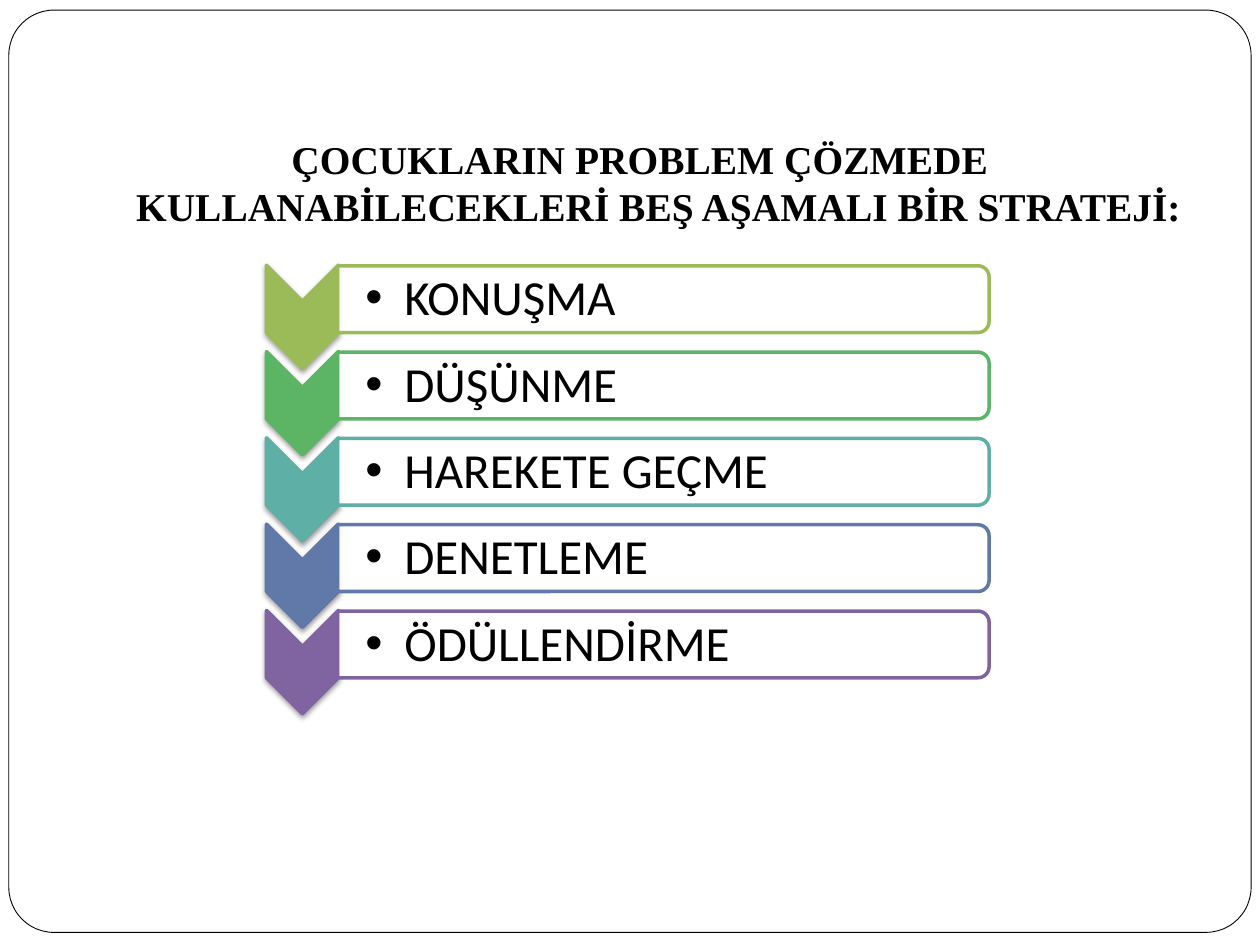
from lxml import etree
from pptx import Presentation
from pptx.dml.color import RGBColor
from pptx.enum.shapes import MSO_SHAPE
from pptx.enum.text import MSO_ANCHOR, PP_ALIGN
from pptx.oxml import parse_xml
from pptx.oxml.ns import nsdecls, qn
from pptx.util import Inches, Pt

FRAME, CHEVRON, BAR = (MSO_SHAPE.ROUNDED_RECTANGLE, MSO_SHAPE.CHEVRON,
                       MSO_SHAPE.ROUND_2_SAME_RECTANGLE)
TOP, MIDDLE = MSO_ANCHOR.TOP, MSO_ANCHOR.MIDDLE
CENTER, LEFT = PP_ALIGN.CENTER, PP_ALIGN.LEFT
TITLE = "ÇOCUKLARIN PROBLEM ÇÖZMEDE KULLANABİLECEKLERİ BEŞ AŞAMALI BİR STRATEJİ:"
STEPS = [("KONUŞMA", "9BBB59"), ("DÜŞÜNME", "5CB565"), ("HAREKETE GEÇME", "5EAFA6"),
         ("DENETLEME", "6179A8"), ("ÖDÜLLENDİRME", "8064A2")]
PITCH = 0.685
SHADOW = (f'<a:effectLst {nsdecls("a")}><a:outerShdw blurRad="40000" dist="20000" '
          'dir="5400000" rotWithShape="0"><a:srgbClr val="000000">'
          '<a:alpha val="38000"/></a:srgbClr></a:outerShdw></a:effectLst>')


def rgb(value):
    """Return the colour for a hex string."""
    return RGBColor.from_string(value)


def assign(obj, values):
    """Set each attribute named in a dict."""
    for name, value in values.items():
        setattr(obj, name, value)


class Deck:
    """Holds the text styles and the current slide."""

    title = {"name": "Times New Roman", "size": Pt(22.5), "bold": True}
    step = {"name": "Calibri", "size": Pt(28)}

    def __init__(self, prs):
        """Add a blank slide."""
        self.s = prs.slides.add_slide(prs.slide_layouts[6])

    def shape(self, kind, box, fill, line, width=2, rotation=0):
        """Add a filled and outlined shape without a shadow."""
        sp = self.s.shapes.add_shape(kind, *map(Inches, box))
        sp.rotation = rotation
        sp.shadow.inherit = False
        sp.fill.solid()
        sp.fill.fore_color.rgb = rgb(fill)
        sp.line.color.rgb = rgb(line)
        sp.line.width = Pt(width)
        return sp

    def frame(self, box):
        """Add the rounded slide border."""
        sp = self.shape(FRAME, box, "FFFFFF", "000000", 0.5)
        sp.adjustments[0] = 0.049

    def chevron(self, box, color):
        """Add a downward chevron with a soft shadow."""
        sp = self.shape(CHEVRON, box, color, color, rotation=90)
        effects = sp._element.spPr.find(qn("a:effectLst"))
        effects.getparent().replace(effects, parse_xml(SHADOW))

    def bar(self, box, color):
        """Add a nearly opaque white bar rounded on its right side."""
        sp = self.shape(BAR, box, "FFFFFF", color, rotation=90)
        fill = sp._element.spPr.find(qn("a:solidFill"))
        etree.SubElement(fill[0], qn("a:alpha"), val="90000")

    def text(self, text, box, font, insets, anchor, align, indent, spacing, bullet=None):
        """Add a wrapped text box with a hanging indent."""
        tf = self.s.shapes.add_textbox(*map(Inches, box)).text_frame
        sides = ("margin_left", "margin_top", "margin_right", "margin_bottom")
        assign(tf, dict(zip(sides, map(Inches, insets))))
        assign(tf, {"word_wrap": True, "vertical_anchor": anchor})
        p = tf.paragraphs[0]
        assign(p, {"alignment": align, **spacing})
        pPr = p._p.get_or_add_pPr()
        pPr.set("marL", str(Inches(indent)))
        pPr.set("indent", str(-Inches(indent)))
        if bullet:
            etree.SubElement(pPr, qn("a:buFont"), typeface="Arial")
            etree.SubElement(pPr, qn("a:buChar"), char=bullet)
        r = p.add_run()
        r.text = text
        assign(r.font, font)
        r.font.color.rgb = rgb("000000")


def main():
    """Build and save the slide."""
    prs = Presentation()
    prs.slide_width, prs.slide_height = Inches(10), Inches(7.5)
    deck = Deck(prs)
    deck.frame((0.07, 0.08, 9.86, 7.32))
    deck.text(TITLE, (0.39, 1.02, 9.38, 1.17), deck.title, (0.1, 0.05, 0.1, 0.05),
              TOP, CENTER, 0.3, {"space_before": Pt(5.8)})
    for i, (label, color) in enumerate(STEPS):
        y = i * PITCH
        deck.chevron((1.99, 2.23 + y, 0.82, 0.57), color)
        deck.bar((5, y - 0.21, 0.53, 5.17), color)
        deck.text(label, (2.68, 2.14 + y, 5.14, 0.48), deck.step,
                  (0.22, 0.02, 0.02, 0.02), MIDDLE, LEFT, 0.31,
                  {"level": 1, "line_spacing": 0.9}, "•")
    prs.save("out.pptx")


if __name__ == "__main__":
    main()
